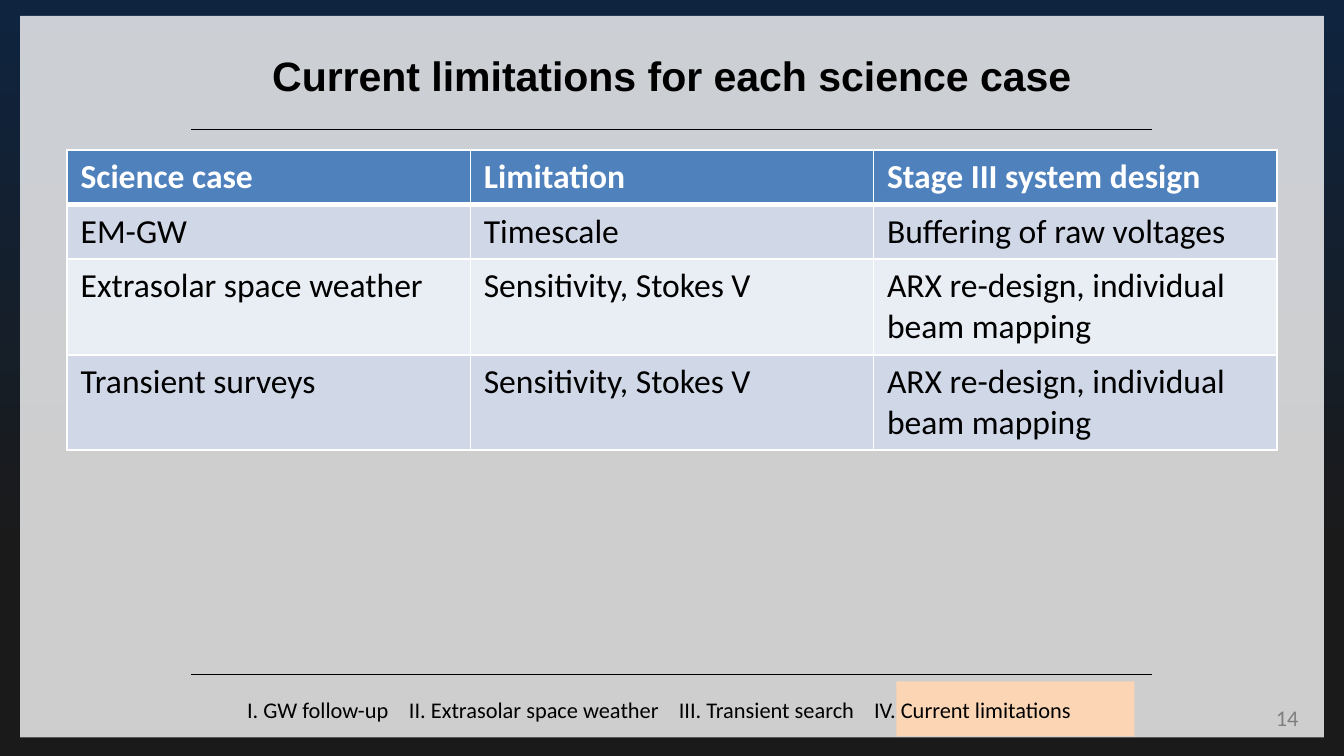
from lxml.etree import SubElement
from pptx import Presentation
from pptx.dml.color import RGBColor
from pptx.enum.shapes import MSO_CONNECTOR, MSO_SHAPE
from pptx.enum.text import MSO_ANCHOR, PP_ALIGN
from pptx.oxml.ns import qn
from pptx.util import Cm, Pt

BLACK, WHITE, GREY = "000000", "FFFFFF", "7F7F7F"
HEADER_BLUE, BAND_DARK, BAND_LIGHT = "4F81BD", "D0D8E8", "E9EDF4"
ROWS = [
    ["Science case", "Limitation", "Stage III system design"],
    ["EM-GW", "Timescale", "Buffering of raw voltages"],
    ["Extrasolar space weather", "Sensitivity, Stokes V",
     "ARX re-design, individual beam mapping"],
    ["Transient surveys", "Sensitivity, Stokes V",
     "ARX re-design, individual beam mapping"],
]
SECTIONS = ["I. GW follow-up", "II. Extrasolar space weather",
            "III. Transient search", "IV. Current limitations"]
SECTION_STOPS = [3.06, 8.16, 11.85]


def color(text):
    return RGBColor.from_string(text)


class SlideBuilder:
    """Holds the text style and the current slide; lengths are centimetres."""

    body_font = "Calibri"
    title_font = "Arial"

    def __init__(self, page):
        self.page = page
        self.shapes = page.shapes

    def background(self, *stops):
        fill = self.page.background.fill
        fill.gradient()
        fill.gradient_angle = 90
        for stop, (position, hue) in zip(fill.gradient_stops, stops):
            stop.position = position
            stop.color.rgb = color(hue)

    def style(self, para, size, hue, bold=False, name=None):
        font = para.font
        font.name = name or self.body_font
        font.size = Pt(size)
        font.bold = bold
        font.color.rgb = color(hue)

    def rectangle(self, left, top, width, height, hue, opacity=100):
        shape = self.shapes.add_shape(
            MSO_SHAPE.RECTANGLE, Cm(left), Cm(top), Cm(width), Cm(height))
        shape.shadow.inherit = False
        shape.fill.solid()
        shape.fill.fore_color.rgb = color(hue)
        shape.line.fill.background()
        if opacity < 100:
            tint = shape.fill._xPr.find(".//" + qn("a:srgbClr"))
            SubElement(tint, qn("a:alpha"), val=str(opacity * 1000))

    def rule(self, left, right, y):
        line = self.shapes.add_connector(
            MSO_CONNECTOR.STRAIGHT, Cm(left), Cm(y), Cm(right), Cm(y))
        line.line.color.rgb = color(BLACK)
        line.line.width = Pt(0.25)
        SubElement(line._element.spPr, qn("a:effectLst"))

    def text(self, left, top, width, height, words, hue, align, stops=()):
        box = self.shapes.add_textbox(Cm(left), Cm(top), Cm(width), Cm(height))
        frame = box.text_frame
        frame.word_wrap = True
        frame.vertical_anchor = MSO_ANCHOR.MIDDLE
        para = frame.paragraphs[0]
        para.text = words
        para.alignment = align
        if stops:
            tabs = SubElement(para._p.get_or_add_pPr(), qn("a:tabLst"))
            for stop in stops:
                SubElement(tabs, qn("a:tab"), pos=str(Cm(stop)), algn="l")
        self.style(para, 12, hue)

    def title(self, left, top, width, height, words):
        """Fill the title and bring it in front of the panel."""
        title = self.shapes.title
        self.shapes._spTree.append(title._element)
        title.left, title.top = Cm(left), Cm(top)
        title.width, title.height = Cm(width), Cm(height)
        title.text_frame.vertical_anchor = MSO_ANCHOR.MIDDLE
        para = title.text_frame.paragraphs[0]
        para.text = words
        para.alignment = PP_ALIGN.CENTER
        self.style(para, 22, BLACK, True, self.title_font)

    def borders(self, cell, bottom):
        properties = cell._tc.get_or_add_tcPr()
        widths = {"a:lnL": 1, "a:lnR": 1, "a:lnT": 1, "a:lnB": bottom}
        for index, (tag, width) in enumerate(widths.items()):
            edge = SubElement(properties, qn(tag), w=str(Pt(width)))
            properties.insert(index, edge)
            fill = SubElement(edge, qn("a:solidFill"))
            SubElement(fill, qn("a:srgbClr"), val=WHITE)

    def table(self, left, top, width, row_height, rows):
        table = self.shapes.add_table(
            len(rows), len(rows[0]), Cm(left), Cm(top),
            Cm(width), Cm(row_height * len(rows))).table
        for row_index, row in enumerate(rows):
            table.rows[row_index].height = Cm(row_height)
            header = row_index == 0
            band = BAND_DARK if row_index % 2 else BAND_LIGHT
            for column_index, words in enumerate(row):
                cell = table.cell(row_index, column_index)
                cell.text = words
                cell.fill.solid()
                cell.fill.fore_color.rgb = color(HEADER_BLUE if header else band)
                self.borders(cell, 3 if header else 1)
                self.style(cell.text_frame.paragraphs[0], 18,
                           WHITE if header else BLACK, header)


def main():
    deck = Presentation()
    deck.slide_width, deck.slide_height = Cm(25.4), Cm(14.29)
    builder = SlideBuilder(deck.slides.add_slide(deck.slide_layouts[5]))

    builder.background((0.26, "1A1A1A"), (1, "0F243E"))
    builder.rectangle(0.38, 0.3, 24.64, 13.64, WHITE, opacity=79)
    builder.rectangle(16.94, 12.88, 4.5, 1.04, "FCD5B5")
    for y in (2.44, 12.75):
        builder.rule(3.61, 21.77, y)
    builder.text(4.42, 13.03, 17.12, 0.76, "\t".join(SECTIONS), BLACK,
                 PP_ALIGN.LEFT, SECTION_STOPS)
    builder.title(1.27, 0.41, 22.86, 2.03,
                  "Current limitations for each science case")
    builder.table(1.27, 2.84, 22.86, 1.03, ROWS)
    builder.text(18.87, 13.18, 5.92, 0.76, "14", GREY, PP_ALIGN.RIGHT)

    deck.save("out.pptx")


if __name__ == "__main__":
    main()
